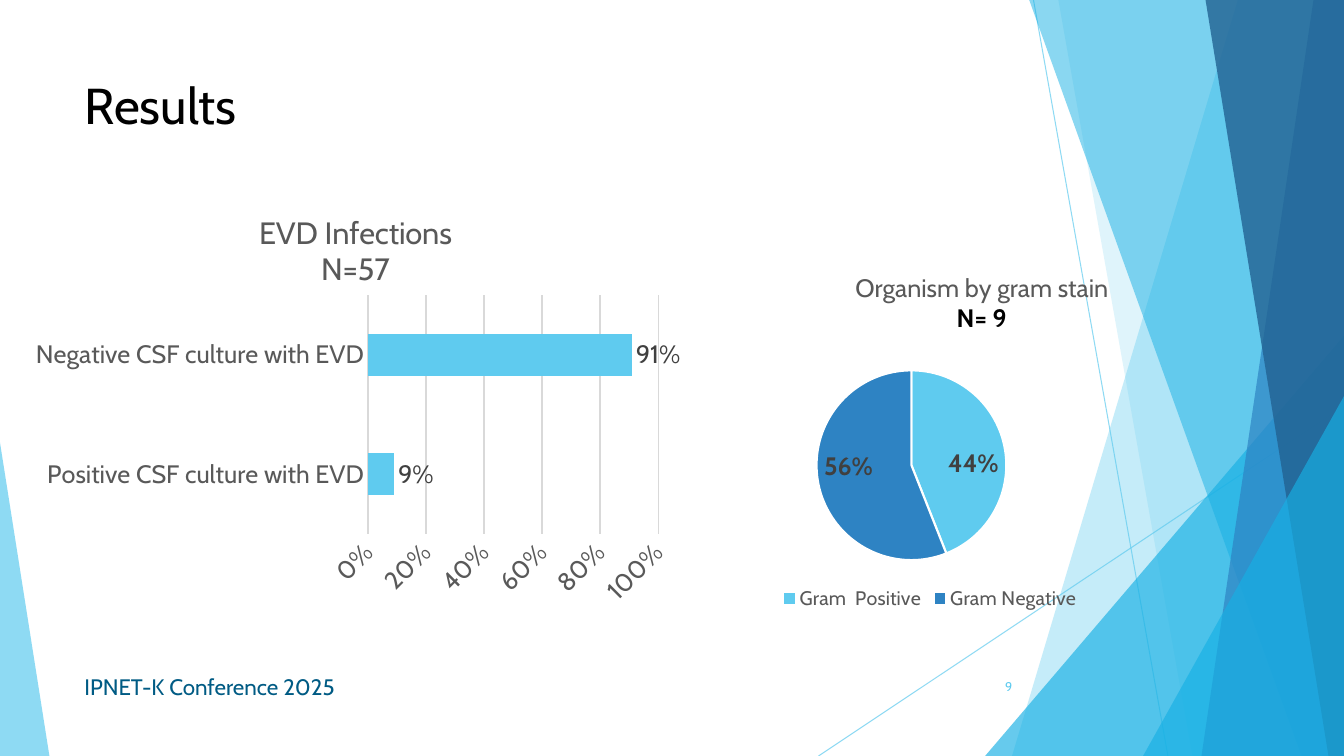
from dataclasses import dataclass
from lxml import etree
from pptx import Presentation
from pptx.chart.data import CategoryChartData
from pptx.dml.color import RGBColor as RGB
from pptx.enum.chart import XL_CHART_TYPE as CT, XL_LABEL_POSITION as LP
from pptx.enum.chart import XL_LEGEND_POSITION as LEGEND, XL_TICK_MARK as TICK
from pptx.enum.shapes import MSO_CONNECTOR as CONN, MSO_SHAPE as SHAPE
from pptx.enum.text import MSO_ANCHOR as ANCHOR, PP_ALIGN as ALIGN
from pptx.oxml import parse_xml
from pptx.oxml.ns import nsdecls, qn
from pptx.util import Inches, Pt


@dataclass
class Theme:
    face: str = "Cabin"
    black: str = "000000"
    grey: str = "595959"
    label: str = "404040"
    grid: str = "D9D9D9"
    sky: str = "5FCBEF"
    cyan: str = "17B0E4"
    blue: str = "2E83C3"
    navy: str = "226292"
    footer: str = "005B84"
    title_pt: int = 36
    head_pt: int = 22
    body_pt: int = 18
    foot_pt: int = 16
    legend_pt: int = 14
    number_pt: int = 9


t = Theme()
prs = Presentation()
prs.slide_width, prs.slide_height = Inches(13.333), Inches(7.5)
s = prs.slides.add_slide(prs.slide_layouts[5])


def share(*percents):
    sides = (prs.slide_width, prs.slide_height) * 2
    return [int(side * p / 100) for side, p in zip(sides, percents)]


def style(font, size, color, bold=False):
    font.name, font.size, font.bold = t.face, Pt(size), bold
    font.color.rgb = RGB.from_string(color)


# each ray: start and end
for ray in ((76.9, 0, 86.9, 100), (100, 53.7, 60.9, 100)):
    c = s.shapes.add_connector(CONN.STRAIGHT, *share(*ray))
    c.line.width = Pt(0.75)
    c.line.color.rgb = RGB.from_string(t.sky)
    color = c.line._ln.find(".//" + qn("a:srgbClr"))
    etree.SubElement(color, qn("a:alpha")).set("val", "70000")
    etree.SubElement(c._element.spPr, qn("a:effectLst"))

# two numbers: top and bottom of a slanted left edge; five: triangle box and apex
facets = (
    ((92.1, 75.3), t.sky, 36),
    ((78.75, 88.73), t.sky, 20),
    ((73.3, 44.4, 26.7, 55.6, 1), t.cyan, 66),
    ((76.58, 96.83), t.cyan, 50),
    ((97.73, 89.4), t.blue, 70),
    ((89.7, 98.85), t.navy, 80),
    ((85.05, 52.4, 14.95, 47.6, 1), t.cyan, 66),
    ((0, 58.53, 3.68, 41.47, 0), t.sky, 70),
)
for geometry, fill, opacity in facets:
    if len(geometry) == 2:
        top, bottom = geometry
        outline = s.shapes.build_freeform(*share(top, 0), scale=1.0)
        corners = ((100, 0), (100, 100), (bottom, 100))
        outline.add_line_segments([share(*corner) for corner in corners])
        sp = outline.convert_to_shape()
    else:
        *box, apex = geometry
        sp = s.shapes.add_shape(SHAPE.ISOSCELES_TRIANGLE, *share(*box))
        sp.adjustments[0] = apex
    sp.shadow.inherit = False
    sp.line.fill.background()
    sp.fill.solid()
    sp.fill.fore_color.rgb = RGB.from_string(fill)
    color = sp._element.spPr.find(".//" + qn("a:srgbClr"))
    etree.SubElement(color, qn("a:alpha")).set("val", str(opacity * 1000))

title = s.shapes.title
title.left, title.top, title.width, title.height = share(5.55, 8.93, 70.5, 9.73)
number = s.shapes.add_textbox(*share(70.43, 88.13, 5.63, 5.33))
footer = s.shapes.add_textbox(*share(5.55, 88.13, 51.68, 5.33))
for sp, text, size, color, align in (
    (title, "Results", t.title_pt, t.black, ALIGN.LEFT),
    (number, "9", t.number_pt, t.sky, ALIGN.RIGHT),
    (footer, "IPNET-K Conference 2025", t.foot_pt, t.footer, ALIGN.LEFT),
):
    tf = sp.text_frame
    tf.word_wrap, tf.vertical_anchor = True, ANCHOR.MIDDLE
    p = tf.paragraphs[0]
    p.text, p.alignment = text, align
    style(p.font, size, color)

charts = []
for kind, box, values, heading, title_at, plot_at in (
    (CT.BAR_CLUSTERED, (1.88, 24.93, 49.05, 56.4),
     {"Positive CSF culture with EVD": 0.09, "Negative CSF culture with EVD": 0.91},
     (("EVD Infections", t.head_pt, t.grey, False), ("N=57", t.head_pt, t.grey, False)),
     {"x": 0.35, "y": 0.05}, {"x": 0.52, "y": 0.25, "w": 0.44, "h": 0.56}),
    (CT.PIE, (55.43, 33.07, 27.53, 48.27),
     {"Gram  Positive": 0.44, "Gram Negative": 0.56},
     (("Organism by gram stain", t.body_pt, t.grey, False), ("N= 9", t.body_pt, t.black, True)),
     {"x": 0.29, "y": 0.05}, {"x": 0.19, "y": 0.33, "w": 0.52, "h": 0.52}),
):
    data = CategoryChartData(number_format="0%")
    data.categories = list(values)
    data.add_series("Series 1", list(values.values()))
    chart = s.shapes.add_chart(kind, *share(*box), data).chart
    charts.append(chart)
    style(chart.font, t.body_pt, t.grey)

    tf = chart.chart_title.text_frame
    chart.chart_title.include_in_layout = False
    tf.text = "\n".join(line[0] for line in heading)
    for p, (_, size, color, bold) in zip(tf.paragraphs, heading):
        style(p.font, size, color, bold)

    space = chart.element.chart
    for parent, index, spot in (
        (space.find(qn("c:title")), 1, title_at),
        (space.find(qn("c:plotArea")), 0, plot_at),
    ):
        for old in parent.findall(qn("c:layout")):
            parent.remove(old)
        target = '<c:layoutTarget val="inner"/>' if "w" in spot else ""
        modes = "".join(f'<c:{k}Mode val="edge"/>' for k in "xy")
        sizes = "".join(f'<c:{k} val="{v}"/>' for k, v in spot.items())
        parent.insert(index, parse_xml(
            f'<c:layout {nsdecls("c")}><c:manualLayout>{target}{modes}{sizes}'
            "</c:manualLayout></c:layout>"))

    plot = chart.plots[0]
    plot.has_data_labels = True
    labels = plot.data_labels
    labels.show_value, labels.show_percentage = True, False
    labels.number_format, labels.number_format_is_linked = "0%", False
    labels.position = LP.INSIDE_END if kind == CT.PIE else LP.OUTSIDE_END
    style(labels.font, t.body_pt, t.label, kind == CT.PIE)

bar, pie = charts
bar.has_legend = False
plot = bar.plots[0]
plot.gap_width, plot.vary_by_categories = 182, False
fill = plot.series[0].format.fill
fill.solid()
fill.fore_color.rgb = RGB.from_string(t.sky)
for axis in (bar.category_axis, bar.value_axis):
    axis.major_tick_mark = axis.minor_tick_mark = TICK.NONE
    style(axis.tick_labels.font, t.body_pt, t.grey)
axis.minimum_scale, axis.maximum_scale, axis.major_unit = 0, 1, 0.2
axis.tick_labels.number_format, axis.tick_labels.number_format_is_linked = "0%", False
axis.format.line.fill.background()
axis._element.find(qn("c:txPr")).find(qn("a:bodyPr")).set("rot", str(-45 * 60000))
for line in (bar.category_axis.format.line, axis.major_gridlines.format.line):
    line.width = Pt(0.75)
    line.color.rgb = RGB.from_string(t.grid)

pie.has_legend = True
pie.legend.position, pie.legend.include_in_layout = LEGEND.BOTTOM, False
style(pie.legend.font, t.legend_pt, t.grey)
pie.plots[0].vary_by_categories = True
for i, color in enumerate((t.sky, t.blue)):
    wedge = pie.plots[0].series[0].points[i].format
    wedge.fill.solid()
    wedge.fill.fore_color.rgb = RGB.from_string(color)
    wedge.line.width = Pt(1.5)
    wedge.line.color.rgb = RGB(255, 255, 255)

prs.save("out.pptx")
